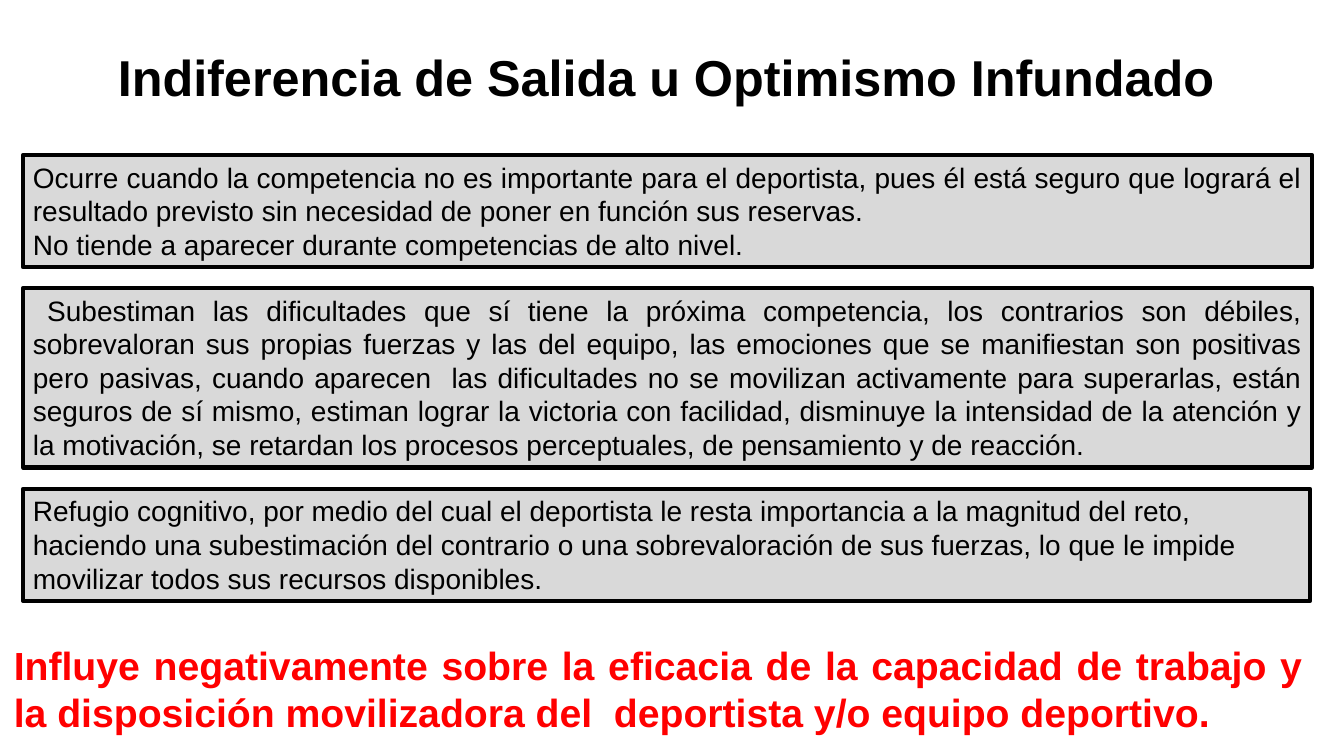
from pptx import Presentation
from pptx.dml.color import RGBColor
from pptx.enum.shapes import MSO_SHAPE as Shape
from pptx.enum.text import MSO_ANCHOR as Anchor, MSO_AUTO_SIZE as AutoSize, PP_ALIGN as Align
from pptx.util import Cm, Pt

BLACK = RGBColor(0x00, 0x00, 0x00)
GREY = RGBColor(0xD9, 0xD9, 0xD9)
RED = RGBColor(0xFF, 0x00, 0x00)
FONT = "Arial"

OCCURRENCE = [
    "Ocurre cuando la competencia no es importante para el deportista, pues él está "
    "seguro que logrará el resultado previsto sin necesidad de poner en función sus reservas.",
    "No tiende a aparecer durante competencias de alto nivel.",
]
UNDERESTIMATION = [
    "Subestiman las dificultades que sí tiene la próxima competencia, los contrarios son "
    "débiles, sobrevaloran sus propias fuerzas y las del equipo, las emociones que se "
    "manifiestan son positivas pero pasivas, cuando aparecen  las dificultades no se "
    "movilizan activamente para superarlas, están seguros de sí mismo, estiman lograr la "
    "victoria con facilidad, disminuye la intensidad de la atención y la motivación, se "
    "retardan los procesos perceptuales, de pensamiento y de reacción.",
]
REFUGE = [
    "Refugio cognitivo, por medio del cual el deportista le resta importancia a la magnitud "
    "del reto, haciendo una subestimación del contrario o una sobrevaloración de sus "
    "fuerzas, lo que le impide movilizar todos sus recursos disponibles.",
]
CONCLUSION = [
    "Influye negativamente sobre la eficacia de la capacidad de trabajo y la disposición "
    "movilizadora del  deportista y/o equipo deportivo.",
]


def write_text(box, texts, size, color=BLACK, bold=False, align=Align.LEFT):
    frame = box.text_frame
    frame.word_wrap = True
    frame.auto_size = AutoSize.SHAPE_TO_FIT_TEXT
    frame.vertical_anchor = Anchor.TOP
    for index, text in enumerate(texts):
        para = frame.add_paragraph() if index else frame.paragraphs[0]
        para.text = text
        para.alignment = align
        para.font.name = FONT
        para.font.size = Pt(size)
        para.font.bold = bold
        para.font.color.rgb = color


def add_text(page, left, top, width, height, texts, size, **style):
    box = page.shapes.add_textbox(Cm(left), Cm(top), Cm(width), Cm(height))
    write_text(box, texts, size, bold=True, **style)


def add_panel(page, top, width, height, texts, align=Align.JUSTIFY):
    panel = page.shapes.add_shape(Shape.RECTANGLE, Cm(0.58), Cm(top), Cm(width), Cm(height))
    panel.shadow.inherit = False
    panel.fill.solid()
    panel.fill.fore_color.rgb = GREY
    panel.line.color.rgb = BLACK
    panel.line.width = Pt(3)
    write_text(panel, texts, 20, align=align)
    return panel


def main():
    deck = Presentation()
    deck.slide_width, deck.slide_height = Cm(33.87), Cm(19.05)
    page = deck.slides.add_slide(deck.slide_layouts[6])

    # Title
    add_text(page, 2.72, 1.04, 28.37, 1.8, ["Indiferencia de Salida u Optimismo Infundado"], 36)

    # Framed descriptions
    add_panel(page, 3.91, 32.49, 2.82, OCCURRENCE)
    panel = add_panel(page, 7.26, 32.49, 4.52, UNDERESTIMATION)
    # First-line indent of the second description
    properties = panel.text_frame.paragraphs[0]._p.get_or_add_pPr()
    properties.set("indent", str(Cm(0.36)))
    add_panel(page, 12.32, 32.44, 2.82, REFUGE, Align.LEFT)

    # Conclusion
    add_text(page, 0.1, 16.03, 32.97, 2.64, CONCLUSION, 28, color=RED, align=Align.JUSTIFY)

    deck.save("out.pptx")


if __name__ == "__main__":
    main()
